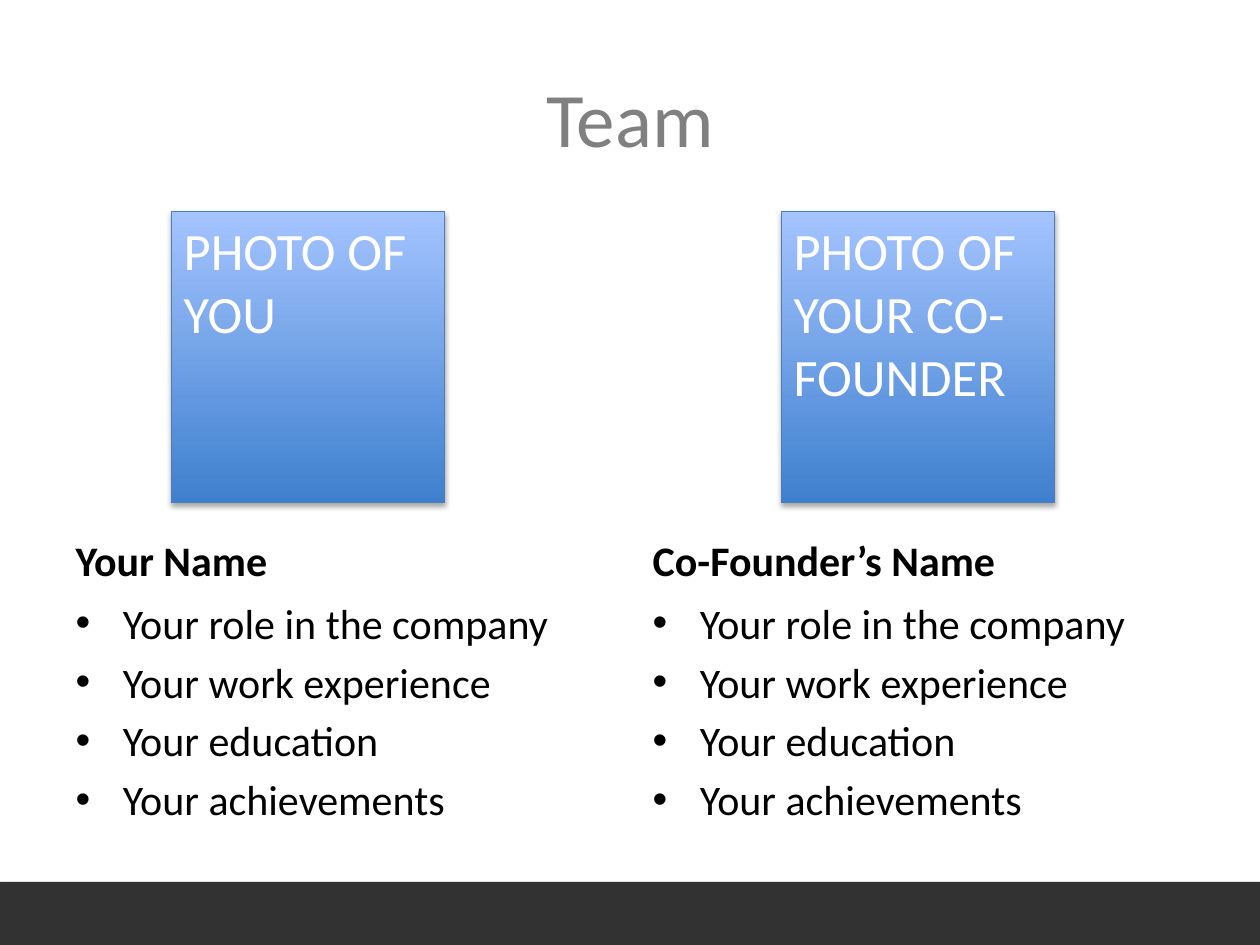
from dataclasses import dataclass

from lxml import etree
from pptx import Presentation
from pptx.dml.color import RGBColor
from pptx.enum.shapes import MSO_SHAPE
from pptx.enum.text import MSO_ANCHOR, MSO_AUTO_SIZE, PP_ALIGN
from pptx.oxml.ns import qn
from pptx.util import Inches, Pt

RECTANGLE = MSO_SHAPE.RECTANGLE
TOP, MIDDLE, BOTTOM = MSO_ANCHOR.TOP, MSO_ANCHOR.MIDDLE, MSO_ANCHOR.BOTTOM
LEFT, CENTER = PP_ALIGN.LEFT, PP_ALIGN.CENTER
NO_AUTOFIT = MSO_AUTO_SIZE.NONE

BLACK = RGBColor(0x00, 0x00, 0x00)
WHITE = RGBColor(0xFF, 0xFF, 0xFF)
TITLE_GRAY = RGBColor(0x80, 0x80, 0x80)
BAR_GRAY = RGBColor(0x32, 0x32, 0x32)
PHOTO_DARK = RGBColor(0x3F, 0x80, 0xCE)
PHOTO_LIGHT = RGBColor(0xA4, 0xC4, 0xFF)
PHOTO_EDGE = RGBColor(0x4B, 0x7E, 0xBC)

FONT = "Calibri"
COMPARISON_LAYOUT = 4

# Two-column grid, in inches
SLIDE_W, SLIDE_H = 10, 7.5
MARGIN = 0.5
COLUMN_W = 4.42
COLUMNS = (MARGIN, SLIDE_W - MARGIN - COLUMN_W)
PHOTO_TOP, PHOTO_W, PHOTO_H = 1.68, 2.17, 2.31
NAME_TOP, NAME_H = PHOTO_TOP + PHOTO_H, 0.7
DETAILS_TOP, DETAILS_H = NAME_TOP + NAME_H, 2.35
BAR_TOP = 7

DETAILS = ("Your role in the company", "Your work experience",
           "Your education", "Your achievements")


@dataclass(frozen=True)
class Member:
    name: str
    photo_label: str
    photo_left: float
    name_idx: int
    details_idx: int


MEMBERS = (
    Member("Your Name", "PHOTO OF YOU", 1.36, 1, 2),
    Member("Co-Founder’s Name", "PHOTO OF YOUR CO-FOUNDER", 6.2, 3, 4),
)


def write(shape, *lines: str, size: float, color: RGBColor,
          bold: bool = False, align=LEFT, anchor=TOP) -> None:
    frame = shape.text_frame
    frame.text = "\n".join(lines)
    frame.word_wrap = True
    frame.auto_size = NO_AUTOFIT
    frame.vertical_anchor = anchor
    for paragraph in frame.paragraphs:
        paragraph.alignment = align
        for run in paragraph.runs:
            run.font.name = FONT
            run.font.size = Pt(size)
            run.font.bold = bold
            run.font.color.rgb = color


def place(shape, left: float, top: float, width: float, height: float) -> None:
    shape.left, shape.top = Inches(left), Inches(top)
    shape.width, shape.height = Inches(width), Inches(height)


def add_box(slide, left: float, top: float, width: float, height: float):
    """Add a rectangle with a soft shadow below it."""
    box = slide.shapes.add_shape(RECTANGLE, Inches(left), Inches(top),
                                 Inches(width), Inches(height))
    box.shadow.inherit = False
    effects = box.element.spPr.find(qn("a:effectLst"))
    shadow = etree.SubElement(effects, qn("a:outerShdw"), blurRad=str(Pt(3.1)),
                              dist=str(Pt(1.8)), dir="5400000", rotWithShape="0")
    shade = etree.SubElement(shadow, qn("a:srgbClr"), val=str(BLACK))
    etree.SubElement(shade, qn("a:alpha"), val="35000")
    return box


def add_photo(slide, member: Member) -> None:
    photo = add_box(slide, member.photo_left, PHOTO_TOP, PHOTO_W, PHOTO_H)
    photo.fill.gradient()
    photo.fill.gradient_angle = 90
    for stop, color in zip(photo.fill.gradient_stops, (PHOTO_DARK, PHOTO_LIGHT)):
        stop.color.rgb = color
    photo.line.color.rgb = PHOTO_EDGE
    photo.line.width = Pt(0.75)
    write(photo, member.photo_label, size=30, color=WHITE)


def main() -> None:
    deck = Presentation()
    deck.slide_width, deck.slide_height = Inches(SLIDE_W), Inches(SLIDE_H)
    slide = deck.slides.add_slide(deck.slide_layouts[COMPARISON_LAYOUT])
    placeholders = {p.placeholder_format.idx: p for p in slide.placeholders}

    # Footer bar, behind everything else
    bar = add_box(slide, 0, BAR_TOP, SLIDE_W, SLIDE_H - BAR_TOP)
    bar.fill.solid()
    bar.fill.fore_color.rgb = BAR_GRAY
    bar.line.fill.background()
    slide.shapes.element.insert(2, bar.element)

    # Title
    title = slide.shapes.title
    place(title, MARGIN, 0.3, SLIDE_W - 2 * MARGIN, 1.25)
    write(title, "Team", size=44, color=TITLE_GRAY, align=CENTER, anchor=MIDDLE)

    # Team members, one per column
    for member, left in zip(MEMBERS, COLUMNS):
        name = placeholders[member.name_idx]
        place(name, left, NAME_TOP, COLUMN_W, NAME_H)
        write(name, member.name, size=24, color=BLACK, bold=True, anchor=BOTTOM)

        details = placeholders[member.details_idx]
        place(details, left, DETAILS_TOP, COLUMN_W, DETAILS_H)
        write(details, *DETAILS, size=24, color=BLACK)

        add_photo(slide, member)

    deck.save("out.pptx")


if __name__ == "__main__":
    main()
